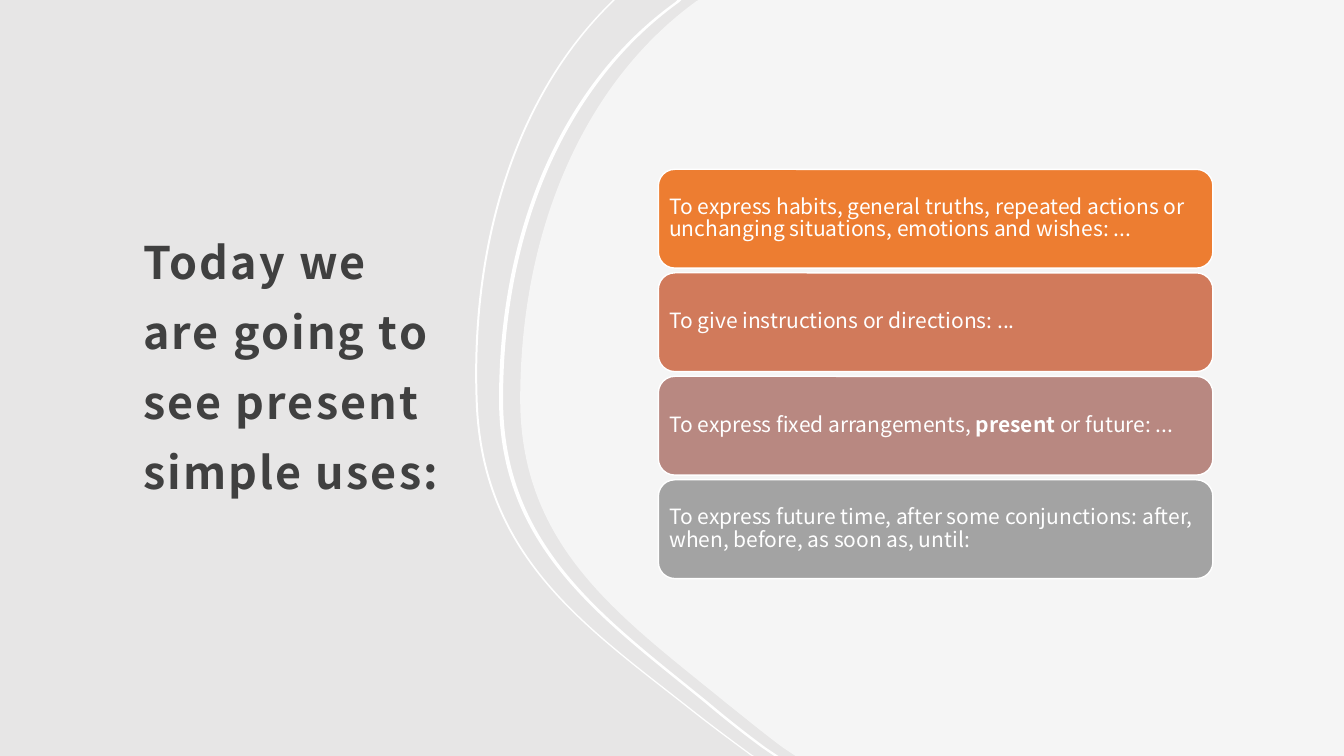
from dataclasses import dataclass

from lxml import etree
from pptx import Presentation
from pptx import util as u
from pptx.dml.color import RGBColor
from pptx.enum import shapes, text
from pptx.oxml import ns

FONT = "Noto Sans CJK JP"
WIDTH, HEIGHT = 13.33, 7.5
COLOURS = {
    "background": "E7E6E6",
    "white": "FFFFFF",
    "title": "404040",
    "habits": "ED7D31",
    "instructions": "D17A5B",
    "arrangements": "B88881",
    "future": "A3A3A3",
}
CARD_LEFT, CARD_TOP, CARD_WIDTH, CARD_HEIGHT = 6.53, 1.68, 5.5, 0.98
CARD_PITCH = 3.08 / 3

Point = tuple[float, float]
Segment = list[Point]


@dataclass
class Ribbon:
    edge: list[Point]
    thickness: float


@dataclass
class Card:
    colour: str
    runs: list[tuple[str, bool]]


PANEL_EDGE = [
    (6.93, 0), (6.91, 0.01), (5.79, 0.82), (5.16, 2.29), (5.16, 3.96),
    (5.16, 5.44), (6.17, 6.13), (7.21, 6.98), (7.4, 7.13), (7.58, 7.28),
    (7.77, 7.42), (7.89, 7.5),
]
RIBBONS = [
    Ribbon([(6.08, 0), (6.05, 0.03), (5.12, 0.94), (4.65, 2.4), (4.72, 4.02),
            (4.79, 5.55), (5.82, 6.23), (6.87, 7.06), (7.06, 7.21),
            (7.25, 7.35), (7.44, 7.49), (7.46, 7.5)], 0.02),
    Ribbon([(6.72, 0), (6.7, 0.02), (5.57, 0.83), (4.95, 2.29), (4.95, 3.96),
            (4.95, 5.43), (5.96, 6.13), (6.99, 6.97), (7.18, 7.13),
            (7.37, 7.28), (7.56, 7.42), (7.68, 7.5)], 0.04),
]
CARDS = [
    Card("habits", [("To express habits, general truths, repeated actions or "
                     "unchanging situations, emotions and wishes: ...", False)]),
    Card("instructions", [("To give instructions or directions: ...", False)]),
    Card("arrangements", [("To express fixed arrangements, ", False),
                          ("present", True), (" or future: ...", False)]),
    Card("future", [("To express future time, after some conjunctions: after, "
                     "when, before, as soon as, until:", False)]),
]


def rgb(name: str) -> RGBColor:
    return RGBColor.from_string(COLOURS[name])


def apply(target, values: dict) -> None:
    for name, value in values.items():
        setattr(target, name, value)


def format_font(font, size: float, colour: str, bold: bool) -> None:
    apply(font, {"name": FONT, "size": u.Pt(size), "bold": bold})
    font.color.rgb = rgb(colour)


def edge_segments(edge: list[Point]) -> list[Segment]:
    curves = [edge[i:i + 3] for i in range(2, len(edge) - 1, 3)]
    return [[edge[1]], *curves, [edge[-1]]]


def bend_line(line, segment: Segment, left: int, top: int) -> None:
    line.tag = ns.qn("a:cubicBezTo")
    line.clear()
    for x, y in segment:
        etree.SubElement(line, ns.qn("a:pt"), x=str(u.Inches(x) - left),
                         y=str(u.Inches(y) - top))


def draw_outline(slide, start: Point, segments: list[Segment]):
    builder = slide.shapes.build_freeform(u.Inches(start[0]), u.Inches(start[1]))
    builder.add_line_segments(
        [(u.Inches(x), u.Inches(y)) for x, y in (seg[-1] for seg in segments)],
        close=True)
    sp = builder.convert_to_shape()
    sp.shadow.inherit = False
    sp.fill.solid()
    sp.fill.fore_color.rgb = rgb("white")
    sp.line.fill.background()
    lines = list(sp._element.iter(ns.qn("a:lnTo")))
    for line, segment in zip(lines, segments):
        if len(segment) == 3:
            parent = line.getparent()
            curve = etree.SubElement(parent, ns.qn("a:cubicBezTo"))
            parent.replace(line, curve)
            bend_line(curve, segment, sp.left, sp.top)
    return sp


def draw_panel(slide) -> None:
    corners = [[(WIDTH, HEIGHT)], [(WIDTH, 0)]]
    sp = draw_outline(slide, PANEL_EDGE[0], edge_segments(PANEL_EDGE) + corners)
    colour = sp._element.spPr.find(".//" + ns.qn("a:srgbClr"))
    etree.SubElement(colour, ns.qn("a:alpha"), val="60000")


def draw_ribbon(slide, ribbon: Ribbon) -> None:
    back = [(x + ribbon.thickness, y) for x, y in reversed(ribbon.edge)]
    segments = edge_segments(ribbon.edge) + [[back[0]]] + edge_segments(back)
    draw_outline(slide, ribbon.edge[0], segments)


def draw_title(slide) -> None:
    sp = slide.shapes.title
    apply(sp, {"left": u.Inches(1.3), "top": u.Inches(1.21),
               "width": u.Inches(3.3), "height": u.Inches(4.68)})
    tf = sp.text_frame
    apply(tf, {"word_wrap": True, "auto_size": text.MSO_AUTO_SIZE.NONE,
               "vertical_anchor": text.MSO_ANCHOR.MIDDLE,
               "margin_left": u.Inches(0.12), "margin_right": u.Inches(0.12),
               "margin_top": u.Inches(0.12), "margin_bottom": u.Inches(0.1)})
    p = tf.paragraphs[0]
    apply(p, {"alignment": text.PP_ALIGN.LEFT, "line_spacing": 1.3,
              "space_before": u.Pt(0)})
    r = p.add_run()
    r.text = "Today we are going to see present simple uses:"
    format_font(r.font, 32, "title", True)
    r.font._element.set("spc", "150")


def draw_card(slide, card: Card, top: float) -> None:
    sp = slide.shapes.add_shape(
        shapes.MSO_SHAPE.ROUNDED_RECTANGLE, u.Inches(CARD_LEFT), u.Inches(top),
        u.Inches(CARD_WIDTH), u.Inches(CARD_HEIGHT))
    sp.shadow.inherit = False
    sp.fill.solid()
    sp.fill.fore_color.rgb = rgb(card.colour)
    sp.line.color.rgb = rgb("white")
    sp.line.width = u.Pt(1)
    tf = sp.text_frame
    apply(tf, {"word_wrap": True, "vertical_anchor": text.MSO_ANCHOR.MIDDLE})
    apply(tf, {f"margin_{side}": u.Inches(0.06)
               for side in ("left", "top", "right", "bottom")})
    p = tf.paragraphs[0]
    apply(p, {"alignment": text.PP_ALIGN.LEFT, "line_spacing": 0.9})
    for words, bold in card.runs:
        r = p.add_run()
        r.text = words
        format_font(r.font, 15, "white", bold)


def main() -> None:
    prs = Presentation()
    apply(prs, {"slide_width": u.Inches(WIDTH), "slide_height": u.Inches(HEIGHT)})
    s = prs.slides.add_slide(prs.slide_layouts.get_by_name("Title Only"))
    s.background.fill.solid()
    s.background.fill.fore_color.rgb = rgb("background")
    draw_title(s)
    draw_panel(s)
    for ribbon in RIBBONS:
        draw_ribbon(s, ribbon)
    for i, card in enumerate(CARDS):
        draw_card(s, card, CARD_TOP + i * CARD_PITCH)
    prs.save("out.pptx")


if __name__ == "__main__":
    main()
